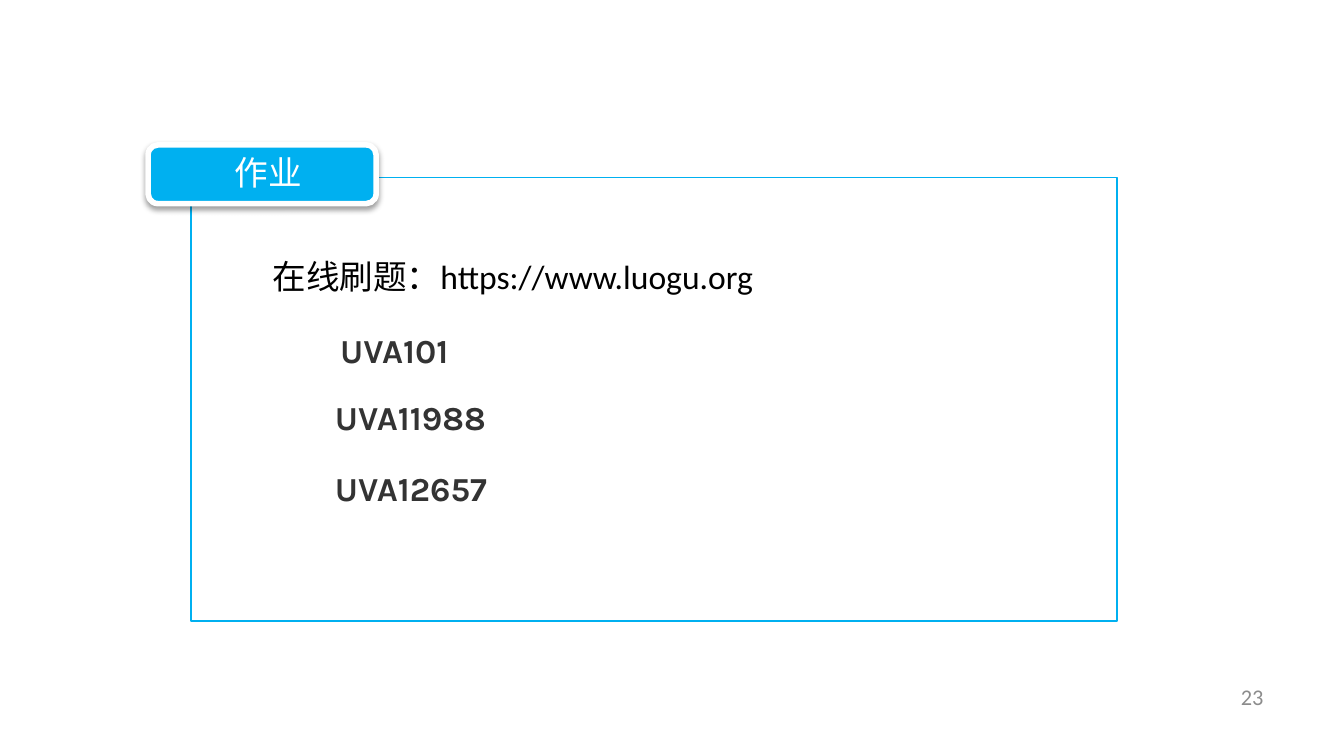
"""Build the homework slide with a labelled panel and a list of exercises."""
from dataclasses import dataclass

from lxml import etree
from pptx import Presentation
from pptx.dml.color import RGBColor
from pptx.enum import shapes, text
from pptx.oxml import parse_xml
from pptx.oxml.ns import nsdecls, qn
from pptx.util import Cm, Pt

BLUE, WHITE, BLACK, DARK, GREY = "00B0F0", "FFFFFF", "000000", "333333", "8C8C8C"
CJK = "Noto Sans CJK SC"


@dataclass
class Label:
    words: str
    left: float
    top: float
    width: float
    height: float = 1.02
    font: str = "Calibri"
    size: float = 18
    color: str = BLACK
    bold: bool = False
    wrap: bool = True
    align: text.PP_ALIGN = text.PP_ALIGN.LEFT
    anchor: text.MSO_ANCHOR = text.MSO_ANCHOR.TOP


def rgb(value: str) -> RGBColor:
    return RGBColor.from_string(value)


def write_label(sp, label: Label) -> None:
    sp.left, sp.top = Cm(label.left), Cm(label.top)
    sp.width, sp.height = Cm(label.width), Cm(label.height)
    tf = sp.text_frame
    frame_format = {"word_wrap": label.wrap, "vertical_anchor": label.anchor,
                    "auto_size": text.MSO_AUTO_SIZE.NONE}
    for name, value in frame_format.items():
        setattr(tf, name, value)
    p = tf.paragraphs[0]
    p.alignment, p.line_spacing, p.space_before = label.align, 1.0, Pt(0)
    r = p.add_run()
    r.text = label.words
    run_format = {"name": label.font, "size": Pt(label.size), "bold": label.bold}
    for name, value in run_format.items():
        setattr(r.font, name, value)
    r.font.color.rgb = rgb(label.color)
    etree.SubElement(r.font._element, qn("a:ea"), typeface=CJK)


def add_box(s, kind, left: float, top: float, width: float, height: float,
            fill: str, line: str, weight: float):
    sp = s.shapes.add_shape(kind, Cm(left), Cm(top), Cm(width), Cm(height))
    sp.shadow.inherit = False
    sp.fill.solid()
    sp.fill.fore_color.rgb = rgb(fill)
    sp.line.color.rgb = rgb(line)
    sp.line.width = Pt(weight)
    return sp


def set_alpha(sp, percent: int) -> None:
    color = sp._element.spPr.find(qn("a:solidFill"))[0]
    etree.SubElement(color, qn("a:alpha"), val=str(percent * 1000))


def add_shadow(sp) -> None:
    effects = sp._element.spPr.find(qn("a:effectLst"))
    effects.append(parse_xml(
        f'<a:outerShdw {nsdecls("a")} blurRad="{Pt(3.1)}" dist="{Pt(1.6)}" '
        f'dir="5400000" rotWithShape="0"><a:srgbClr val="{BLACK}">'
        '<a:alpha val="38000"/></a:srgbClr></a:outerShdw>'))


def main() -> None:
    prs = Presentation()
    prs.slide_width, prs.slide_height = Cm(25.4), Cm(14.29)
    s = prs.slides.add_slide(prs.slide_layouts[5])

    panel = add_box(s, shapes.MSO_SHAPE.RECTANGLE, 3.61, 3.36, 17.5, 8.38, WHITE, BLUE, 0.75)
    set_alpha(panel, 90)
    tab = add_box(s, shapes.MSO_SHAPE.ROUNDED_RECTANGLE, 2.8, 2.74, 4.31, 1.11, BLUE, WHITE, 3)
    add_shadow(tab)

    title = s.shapes.title
    s.shapes._spTree.append(title._element)
    write_label(title, Label("作业", 2.84, 2.74, 4.47, font=CJK, color=WHITE,
                             align=text.PP_ALIGN.CENTER))

    exercise = {"font": "Karla", "color": DARK, "bold": True, "wrap": False}
    labels = [
        Label("在线刷题：https://www.luogu.org", 4.9, 4.72, 15.8),
        Label("UVA101", 6.18, 6.12, 2.9, **exercise),
        Label("UVA11988", 6.08, 7.37, 3.65, **exercise),
        Label("UVA12657", 6.08, 8.72, 3.65, **exercise),
        Label("23", 18.21, 12.78, 5.92, 0.76, size=12, color=GREY,
              align=text.PP_ALIGN.RIGHT, anchor=text.MSO_ANCHOR.MIDDLE),
    ]
    for label in labels:
        write_label(s.shapes.add_textbox(0, 0, 0, 0), label)
    prs.save("out.pptx")


if __name__ == "__main__":
    main()
